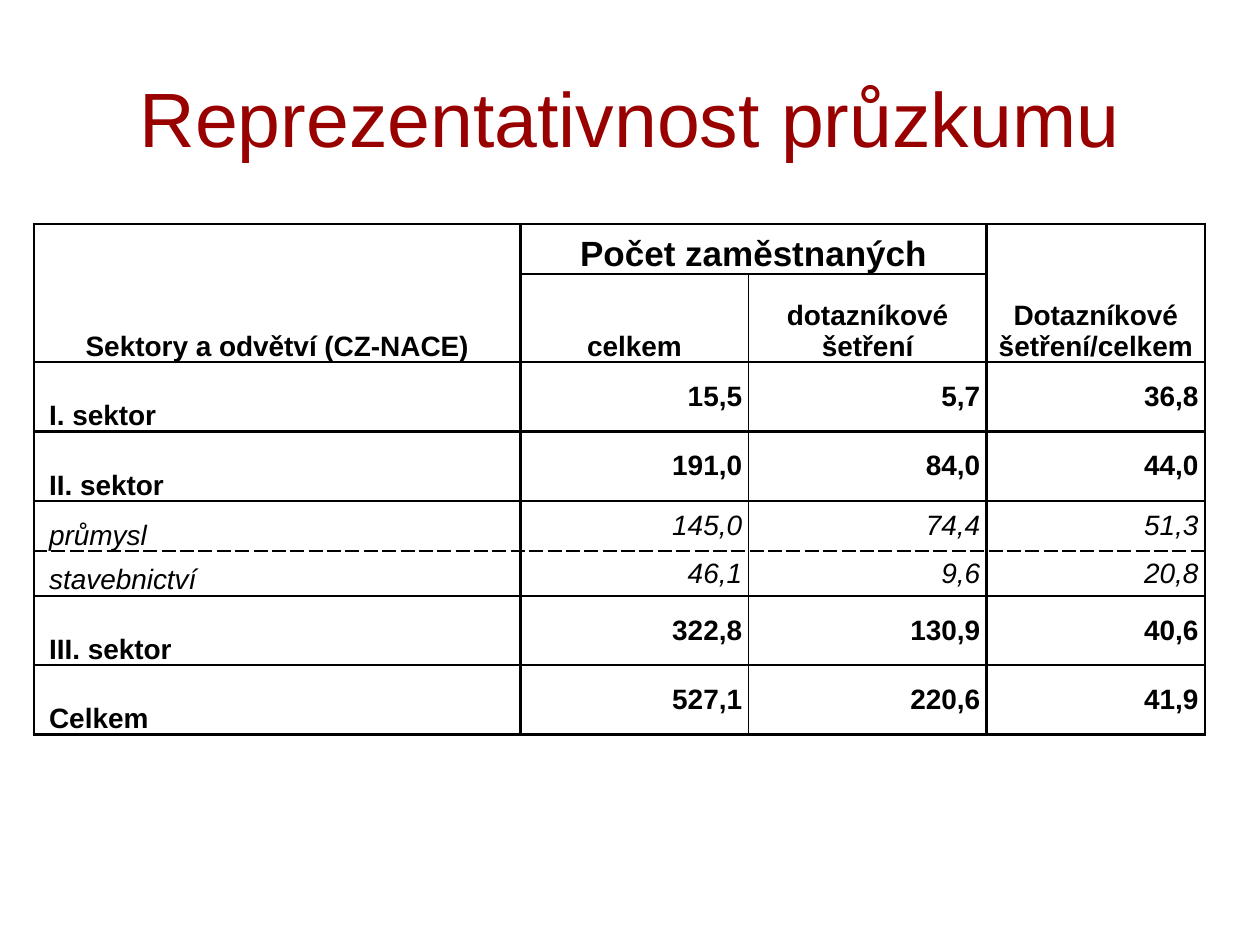
from dataclasses import dataclass

from lxml import etree
from pptx import Presentation
from pptx.dml.color import RGBColor
from pptx.enum import text
from pptx.oxml import ns
from pptx.util import Cm, Pt


@dataclass(frozen=True)
class Theme:
    font: str = "Arial"
    title: str = "990000"
    ink: str = "000000"
    paper: str = "FFFFFF"
    title_size: int = 44
    group_size: int = 20
    body_size: int = 16
    thick: float = 1.5
    thin: float = 1


THEME = Theme()
ALIGN, ANCHOR = text.PP_ALIGN, text.MSO_ANCHOR

COL_WIDTHS = [9.8, 4.6, 4.8, 4.4]
ROW_HEIGHTS = [1, 1.78, 1.4, 1.4, 1.01, 0.9, 1.4, 1.4]
SOLID, LIGHT, DASHED = (THEME.thick, "solid"), (THEME.thin, "solid"), (THEME.thin, "sysDash")
ROW_EDGES = [SOLID, LIGHT, SOLID, SOLID, LIGHT, DASHED, SOLID, LIGHT, SOLID]
COL_EDGES = [SOLID, SOLID, LIGHT, SOLID, SOLID]

# Header cells: row, column, last row, last column, wording, size
HEADERS = [
    (0, 0, 1, 0, "Sektory a odvětví (CZ-NACE)", THEME.body_size),
    (0, 1, 0, 2, "Počet zaměstnaných", THEME.group_size),
    (0, 3, 1, 3, "Dotazníkové šetření/celkem", THEME.body_size),
    (1, 1, 1, 1, "celkem", THEME.body_size),
    (1, 2, 1, 2, "dotazníkové šetření", THEME.body_size),
]
SECTORS = [
    ("I. sektor", "15,5", "5,7", "36,8"),
    ("II. sektor", "191,0", "84,0", "44,0"),
    ("průmysl", "145,0", "74,4", "51,3"),
    ("stavebnictví", "46,1", "9,6", "20,8"),
    ("III. sektor", "322,8", "130,9", "40,6"),
    ("Celkem", "527,1", "220,6", "41,9"),
]
BRANCHES = {"průmysl", "stavebnictví"}


def style(p, size, color, align, bold=False, italic=False):
    p.alignment = align
    f = p.font
    f.name, f.size, f.bold, f.italic = THEME.font, Pt(size), bold, italic
    f.color.rgb = RGBColor.from_string(color)


def add_title(s, left, top, width, height):
    tf = s.shapes.add_textbox(Cm(left), Cm(top), Cm(width), Cm(height)).text_frame
    tf.word_wrap = True
    tf.vertical_anchor = ANCHOR.MIDDLE
    p = tf.paragraphs[0]
    p.text = "Reprezentativnost průzkumu"
    style(p, THEME.title_size, THEME.title, ALIGN.CENTER)


def add_border(cell, side, edge):
    width, dash = edge
    ln = etree.SubElement(cell._tc.get_or_add_tcPr(), ns.qn(f"a:ln{side}"), w=str(Pt(width)))
    fill = etree.SubElement(ln, ns.qn("a:solidFill"))
    etree.SubElement(fill, ns.qn("a:srgbClr"), val=THEME.ink)
    etree.SubElement(ln, ns.qn("a:prstDash"), val=dash)


def frame_cell(cell, row, col):
    """Draw the grid edges around a cell, leaving out those inside a merged area."""
    inner = {
        "L": (row, col) == (0, 2),
        "R": (row, col) == (0, 1),
        "T": row == 1 and col in (0, 3),
        "B": row == 0 and col in (0, 3),
    }
    edges = {"L": COL_EDGES[col], "R": COL_EDGES[col + 1],
             "T": ROW_EDGES[row], "B": ROW_EDGES[row + 1]}
    for side, edge in edges.items():
        if not inner[side]:
            add_border(cell, side, edge)
    cell.fill.solid()
    cell.fill.fore_color.rgb = RGBColor.from_string(THEME.paper)


def fill_cell(cell, wording, size, align, anchor, left=0.0, right=0.0, **face):
    cell.margin_left, cell.margin_right = Cm(left), Cm(right)
    cell.margin_top = cell.margin_bottom = 0
    cell.vertical_anchor = anchor
    p = cell.text_frame.paragraphs[0]
    p.text = wording
    style(p, size, THEME.ink, align, **face)


def add_sector_table(s, left, top):
    frame = s.shapes.add_table(len(ROW_HEIGHTS), len(COL_WIDTHS), Cm(left), Cm(top),
                               Cm(sum(COL_WIDTHS)), Cm(sum(ROW_HEIGHTS)))
    table = frame.table
    table.first_row = table.horz_banding = False
    for column, width in zip(table.columns, COL_WIDTHS):
        column.width = Cm(width)
    for r, height in enumerate(ROW_HEIGHTS):
        table.rows[r].height = Cm(height)
        for c in range(len(COL_WIDTHS)):
            frame_cell(table.cell(r, c), r, c)

    for r, c, last_r, last_c, wording, size in HEADERS:
        cell = table.cell(r, c)
        if (r, c) != (last_r, last_c):
            cell.merge(table.cell(last_r, last_c))
        fill_cell(cell, wording, size, ALIGN.CENTER, ANCHOR.BOTTOM, bold=True)

    for r, (name, *values) in enumerate(SECTORS, start=2):
        branch = name in BRANCHES
        face = {"bold": not branch, "italic": branch}
        fill_cell(table.cell(r, 0), name, THEME.body_size, ALIGN.LEFT, ANCHOR.BOTTOM,
                  left=0.3, **face)
        for c, value in enumerate(values, start=1):
            fill_cell(table.cell(r, c), value, THEME.body_size, ALIGN.RIGHT, ANCHOR.MIDDLE,
                      left=0.13, right=0.13, **face)


def main():
    prs = Presentation()
    prs.slide_width, prs.slide_height = Cm(25.4), Cm(19.05)
    s = prs.slides.add_slide(prs.slide_layouts[6])
    add_title(s, 1.27, 0.76, 22.86, 3.18)
    add_sector_table(s, 0.69, 4.52)
    prs.save("out.pptx")


if __name__ == "__main__":
    main()
